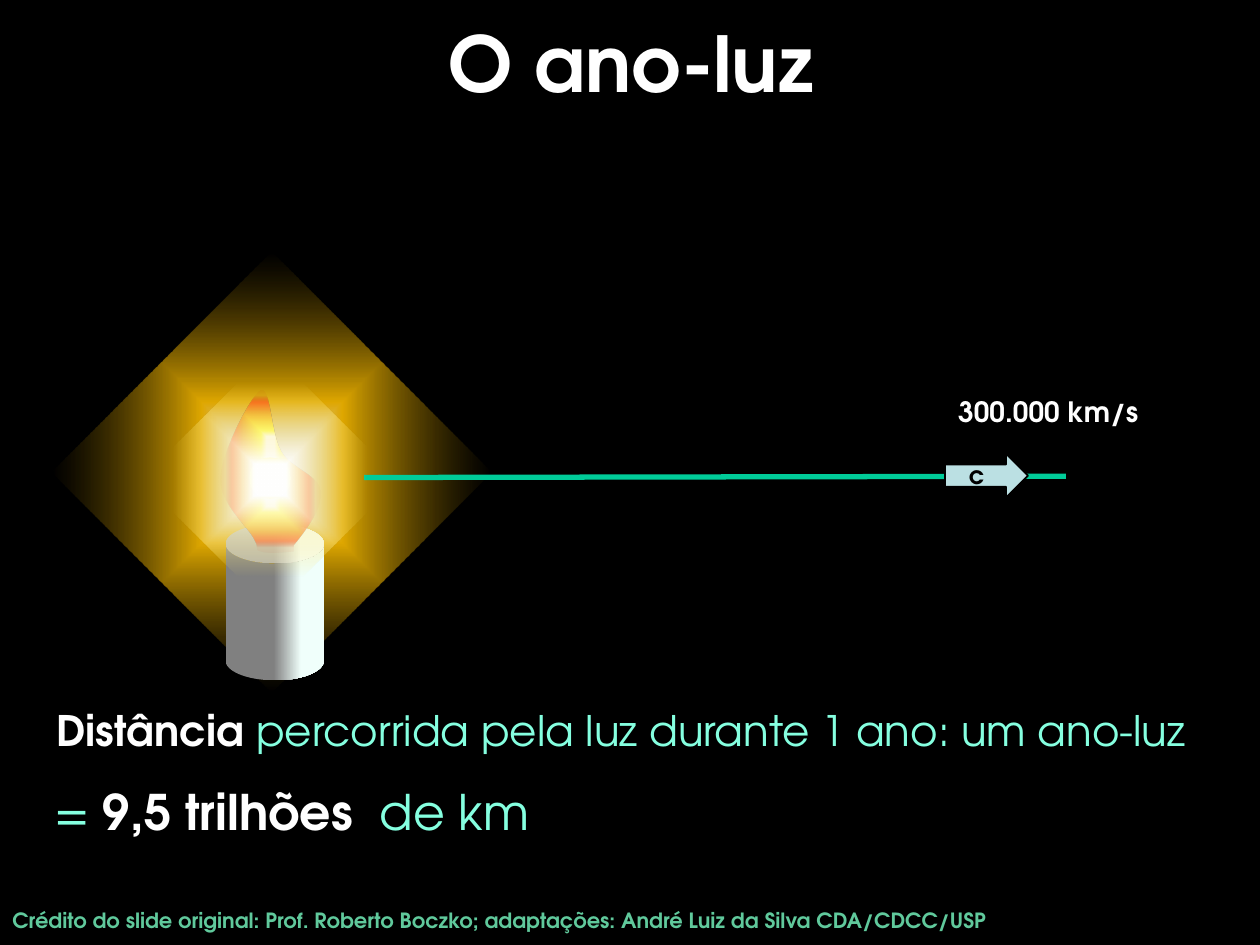
"""Build a slide that explains the light-year with a candle and a ray of light."""
from dataclasses import dataclass

import lxml.etree
import pptx
import pptx.dml.color
import pptx.enum.shapes
import pptx.enum.text
import pptx.oxml.ns
import pptx.shapes.autoshape
import pptx.slide
import pptx.util

Inches = pptx.util.Inches
RGBColor = pptx.dml.color.RGBColor
Shape = pptx.shapes.autoshape.Shape
Slide = pptx.slide.Slide
MSO_SHAPE = pptx.enum.shapes.MSO_SHAPE
PP_ALIGN = pptx.enum.text.PP_ALIGN
MSO_ANCHOR = pptx.enum.text.MSO_ANCHOR
qn = pptx.oxml.ns.qn

FONT = "TeX Gyre Adventor"
BLACK = RGBColor(0x00, 0x00, 0x00)
WHITE = RGBColor(0xFF, 0xFF, 0xFF)
AMBER = RGBColor(0xFF, 0xC0, 0x00)
YELLOW = RGBColor(0xFF, 0xFF, 0x00)
PALE_YELLOW = RGBColor(0xFD, 0xE6, 0x5D)
ORANGE = RGBColor(0xEA, 0x8D, 0x04)
RED = RGBColor(0xFF, 0x33, 0x00)
DARK_RED = RGBColor(0xC0, 0x00, 0x00)
WAX = RGBColor(0xF0, 0xFF, 0xFB)
GRAY = RGBColor(0x80, 0x80, 0x80)
RAY_GREEN = RGBColor(0x00, 0xCC, 0x99)
ARROW_BLUE = RGBColor(0xBB, 0xE0, 0xE3)
MINT = RGBColor(0x85, 0xFF, 0xE0)
CREDIT_GREEN = RGBColor(0x60, 0xC9, 0x9C)


@dataclass(frozen=True)
class Box:
    left: float
    top: float
    width: float
    height: float

    def lengths(self) -> tuple[int, ...]:
        return tuple(Inches(value) for value in (self.left, self.top, self.width, self.height))


@dataclass(frozen=True)
class Stop:
    position: int
    color: RGBColor
    opacity: int = 100


@dataclass(frozen=True)
class Span:
    text: str
    color: RGBColor
    bold: bool = True


@dataclass(frozen=True)
class Label:
    box: Box
    size: int
    spans: tuple[Span, ...]
    alignment: PP_ALIGN = PP_ALIGN.CENTER
    wrap: bool = True
    anchor: MSO_ANCHOR = MSO_ANCHOR.TOP


@dataclass(frozen=True)
class Glow:
    kind: MSO_SHAPE
    box: Box
    stops: tuple[Stop, ...]
    rotation: int = 0


CANDLE_STOPS = (Stop(49, GRAY), Stop(77, WAX))
FLAME_STOPS = (Stop(8, WHITE), Stop(19, YELLOW), Stop(57, ORANGE), Stop(76, RED, 75), Stop(89, DARK_RED, 5))
HALO = Glow(MSO_SHAPE.RECTANGLE, Box(0.92, 2.51, 2.47, 2.47),
            (Stop(7, WHITE, 79), Stop(32, AMBER, 87), Stop(100, BLACK, 44)), 225)
FLAME_GLOWS = (
    Glow(MSO_SHAPE.OVAL, Box(1.98, 3.63, 0.33, 0.33), (Stop(0, YELLOW), Stop(41, WHITE), Stop(97, YELLOW))),
    Glow(MSO_SHAPE.RECTANGLE, Box(1.42, 3.08, 1.45, 1.45), (Stop(12, WHITE), Stop(75, PALE_YELLOW, 0)), 315),
)
FLAME_START = (2.33, 4.32)
FLAME_CURVES = (
    ((2.45, 4.17), (2.56, 4.02), (2.54, 3.89)),
    ((2.53, 3.77), (2.3, 3.71), (2.23, 3.58)),
    ((2.15, 3.45), (2.15, 3.07), (2.07, 3.1)),
    ((1.99, 3.14), (1.76, 3.59), (1.75, 3.79)),
    ((1.74, 3.98), (1.96, 4.17), (2.01, 4.26)),
    ((2.07, 4.36), (2.01, 4.35), (2.07, 4.37)),
    ((2.12, 4.39), (2.23, 4.38), (2.33, 4.37)),
)
CURVE_STEPS = 10
LABELS = (
    Label(Box(0.11, 0.07, 9.8, 0.84), 44, (Span("O ano-luz", WHITE),), anchor=MSO_ANCHOR.MIDDLE),
    Label(Box(7.59, 3.6, 0.32, 0.34), 14, (Span("c", BLACK),), wrap=False),
    Label(Box(7.41, 3.08, 1.82, 0.37), 16, (Span("300.000 km/s", WHITE),)),
    Label(Box(0, 7.15, 10, 0.3), 12,
          (Span("Crédito do slide original: Prof. Roberto Boczko; adaptações: André Luiz da Silva CDA/CDCC/USP",
                CREDIT_GREEN),), PP_ALIGN.LEFT),
    Label(Box(0.35, 5.54, 9.24, 0.51), 24,
          (Span("Distância ", WHITE), Span("percorrida pela luz durante 1 ano: um ano-luz", MINT, False)),
          PP_ALIGN.LEFT),
    Label(Box(0.28, 6.15, 4.07, 0.57), 28,
          (Span("= ", MINT, False), Span("9,5 trilhões ", WHITE), Span(" de km ", MINT, False)), wrap=False),
)


def apply_gradient(shape: Shape, stops: tuple[Stop, ...], linear: bool = False) -> None:
    shape.shadow.inherit = False
    shape.line.fill.background()
    shape.fill.background()
    gradient = lxml.etree.Element(qn("a:gradFill"), rotWithShape="0")
    stop_list = lxml.etree.SubElement(gradient, qn("a:gsLst"))
    for stop in stops:
        entry = lxml.etree.SubElement(stop_list, qn("a:gs"), pos=str(stop.position * 1000))
        color = lxml.etree.SubElement(entry, qn("a:srgbClr"), val=str(stop.color))
        if stop.opacity < 100:
            lxml.etree.SubElement(color, qn("a:alpha"), val=str(stop.opacity * 1000))
    if linear:
        lxml.etree.SubElement(gradient, qn("a:lin"), ang="0", scaled="0")
    else:
        direction = lxml.etree.SubElement(gradient, qn("a:path"), {"path": "shape"})
        lxml.etree.SubElement(direction, qn("a:fillToRect"), dict.fromkeys("ltrb", "50000"))
    properties = shape._element.spPr
    properties.replace(properties.find(qn("a:noFill")), gradient)


def add_glow(slide: Slide, glow: Glow) -> None:
    shape = slide.shapes.add_shape(glow.kind, *glow.box.lengths())
    shape.rotation = glow.rotation
    apply_gradient(shape, glow.stops)


def add_label(slide: Slide, label: Label) -> None:
    frame = slide.shapes.add_textbox(*label.box.lengths()).text_frame
    frame.word_wrap = label.wrap
    frame.vertical_anchor = label.anchor
    paragraph = frame.paragraphs[0]
    paragraph.alignment = label.alignment
    paragraph.font.name = FONT
    paragraph.font.size = pptx.util.Pt(label.size)
    for span in label.spans:
        run = paragraph.add_run()
        run.text = span.text
        run.font.bold = span.bold
        run.font.color.rgb = span.color


def add_ray(slide: Slide) -> None:
    ray = slide.shapes.add_connector(pptx.enum.shapes.MSO_CONNECTOR.STRAIGHT,
                                     Inches(8.46), Inches(3.78), Inches(2.89), Inches(3.79))
    ray.line.color.rgb = RAY_GREEN
    ray.line.width = pptx.util.Pt(3)
    lxml.etree.SubElement(ray._element.spPr, qn("a:effectLst"))
    arrow = slide.shapes.add_shape(MSO_SHAPE.RIGHT_ARROW, *Box(7.5, 3.6, 0.66, 0.35).lengths())
    arrow.shadow.inherit = False
    arrow.fill.solid()
    arrow.fill.fore_color.rgb = ARROW_BLUE
    arrow.line.color.rgb = BLACK
    arrow.line.width = pptx.util.Pt(1)


def flame_points() -> list[tuple[int, int]]:
    points, start = [], FLAME_START
    for first, second, end in FLAME_CURVES:
        for step in range(1, CURVE_STEPS + 1):
            t = step / CURVE_STEPS
            weights = ((1 - t) ** 3, 3 * t * (1 - t) ** 2, 3 * t ** 2 * (1 - t), t ** 3)
            corners = (start, first, second, end)
            points.append(tuple(Inches(sum(weight * corner[axis] for weight, corner in zip(weights, corners)))
                                for axis in (0, 1)))
        start = end
    return points


def add_candle(slide: Slide) -> None:
    candle = slide.shapes.add_shape(MSO_SHAPE.CAN, *Box(1.79, 4.16, 0.78, 1.24).lengths())
    candle.adjustments[0] = 0.4
    apply_gradient(candle, CANDLE_STOPS, linear=True)
    builder = slide.shapes.build_freeform(*(Inches(value) for value in FLAME_START))
    builder.add_line_segments(flame_points(), close=True)
    apply_gradient(builder.convert_to_shape(), FLAME_STOPS)
    for glow in FLAME_GLOWS:
        add_glow(slide, glow)


def main() -> None:
    presentation = pptx.Presentation()
    presentation.slide_width, presentation.slide_height = Inches(10), Inches(7.5)
    slide = presentation.slides.add_slide(presentation.slide_layouts[6])
    slide.background.fill.solid()
    slide.background.fill.fore_color.rgb = BLACK
    add_glow(slide, HALO)
    add_ray(slide)
    for label in LABELS:
        add_label(slide, label)
    add_candle(slide)
    presentation.save("out.pptx")


if __name__ == "__main__":
    main()
